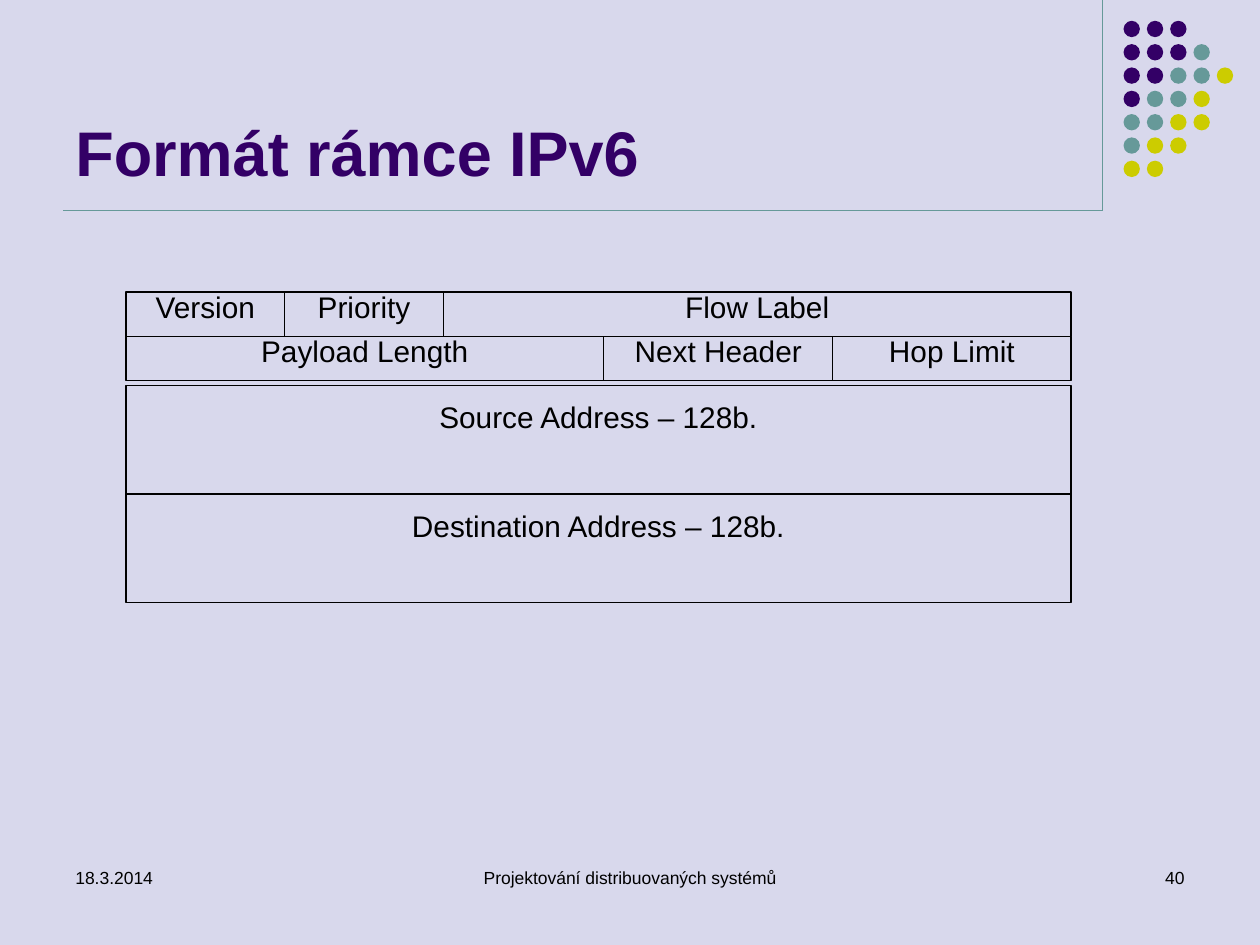
import pptx
import pptx.util
import pptx.dml.color
import pptx.enum.shapes
import pptx.enum.text
import pptx.oxml.ns
import lxml.etree

Cm = pptx.util.Cm
RGBColor = pptx.dml.color.RGBColor
ALIGN = pptx.enum.text.PP_ALIGN
ANCHOR = pptx.enum.text.MSO_ANCHOR
SHAPE = pptx.enum.shapes.MSO_SHAPE

LAVENDER = RGBColor(0xD8, 0xD8, 0xEC)
PURPLE = RGBColor(0x33, 0x00, 0x66)
TEAL = RGBColor(0x66, 0x99, 0x99)
YELLOW = RGBColor(0xCC, 0xCC, 0x00)
BLACK = RGBColor(0x00, 0x00, 0x00)


class Deck:
    """Holds the style and the current slide."""

    font = "Arial"
    line_width = pptx.util.Pt(0.75)

    def __init__(self):
        self.prs = pptx.Presentation()
        self.prs.slide_width, self.prs.slide_height = Cm(25.4), Cm(19.05)
        self.s = self.prs.slides.add_slide(self.prs.slide_layouts[6])
        fill = self.s.background.fill
        fill.solid()
        fill.fore_color.rgb = LAVENDER

    def text(self, text, x, y, w, h, size, color=BLACK, bold=False,
             align=ALIGN.LEFT, **frame):
        tf = self.s.shapes.add_textbox(Cm(x), Cm(y), Cm(w), Cm(h)).text_frame
        for name, value in {"word_wrap": True, **frame}.items():
            setattr(tf, name, value)
        p = tf.paragraphs[0]
        p.alignment = align
        r = p.add_run()
        r.text = text
        formats = {"name": self.font, "size": pptx.util.Pt(size), "bold": bold}
        for name, value in formats.items():
            setattr(r.font, name, value)
        r.font.color.rgb = color

    def line(self, x1, y1, x2, y2, color):
        sp = self.s.shapes.add_connector(
            pptx.enum.shapes.MSO_CONNECTOR.STRAIGHT,
            Cm(x1), Cm(y1), Cm(x2), Cm(y2))
        sp.line.color.rgb = color
        sp.line.width = self.line_width
        lxml.etree.SubElement(sp.element.spPr, pptx.oxml.ns.qn("a:effectLst"))

    def dot(self, x, y, size, color):
        sp = self.s.shapes.add_shape(SHAPE.OVAL, Cm(x), Cm(y), Cm(size), Cm(size))
        sp.shadow.inherit = False
        sp.fill.solid()
        sp.fill.fore_color.rgb = color
        sp.line.fill.background()

    def field(self, text, x, y, w, h, rise, top):
        """Outlined header field; its label starts `rise` above the box."""
        sp = self.s.shapes.add_shape(SHAPE.RECTANGLE, Cm(x), Cm(y), Cm(w), Cm(h))
        sp.shadow.inherit = False
        sp.fill.background()
        sp.line.color.rgb = BLACK
        sp.line.width = self.line_width
        self.text(text, x, y - rise, w, h + 0.18, 17, align=ALIGN.CENTER,
                  margin_left=Cm(0.18), margin_right=Cm(0.18),
                  margin_top=Cm(top), margin_bottom=Cm(0.1))


def main():
    deck = Deck()

    # Corner decoration
    deck.line(22.23, 0, 22.23, 4.24, TEAL)
    deck.line(1.27, 4.24, 22.23, 4.24, TEAL)
    colors = {"P": PURPLE, "T": TEAL, "Y": YELLOW}
    dots = ["PPP", "PPPT", "PPTTY", "PTTY", "TTYY", "TYY", "YY"]
    pitch = 0.47
    for row, codes in enumerate(dots):
        for col, code in enumerate(codes):
            deck.dot(22.65 + col * pitch, 0.42 + row * pitch, 0.33, colors[code])

    # Title
    deck.text("Formát rámce IPv6", 1.27, 0.33, 20.96, 3.61, 36, PURPLE, True,
              vertical_anchor=ANCHOR.BOTTOM)

    # Frame rows: top, height, label rise, label top margin, fields with widths
    rows = [
        (5.89, 0.89, 0.17, 0.1,
         [("Version", 3.2), ("Priority", 3.2), ("Flow Label", 12.65)]),
        (6.78, 0.89, 0.17, 0.1,
         [("Payload Length", 9.63), ("Next Header", 4.62), ("Hop Limit", 4.8)]),
        (7.77, 2.19, 0.43, 0.79, [("Source Address – 128b.", 19.05)]),
        (9.96, 2.19, 0.43, 0.79, [("Destination Address – 128b.", 19.05)]),
    ]
    for y, h, rise, top, fields in rows:
        x = 2.54
        for label, w in fields:
            deck.field(label, x, y, w, h, rise, top)
            x += w

    # Footer
    for text, x, w, align in [
        ("18.3.2014", 1.27, 5.92, ALIGN.LEFT),
        ("Projektování distribuovaných systémů", 8.68, 8.04, ALIGN.CENTER),
        ("40", 18.21, 5.92, ALIGN.RIGHT),
    ]:
        deck.text(text, x, 17.36, w, 1.27, 10, align=align)

    deck.prs.save("out.pptx")


if __name__ == "__main__":
    main()
